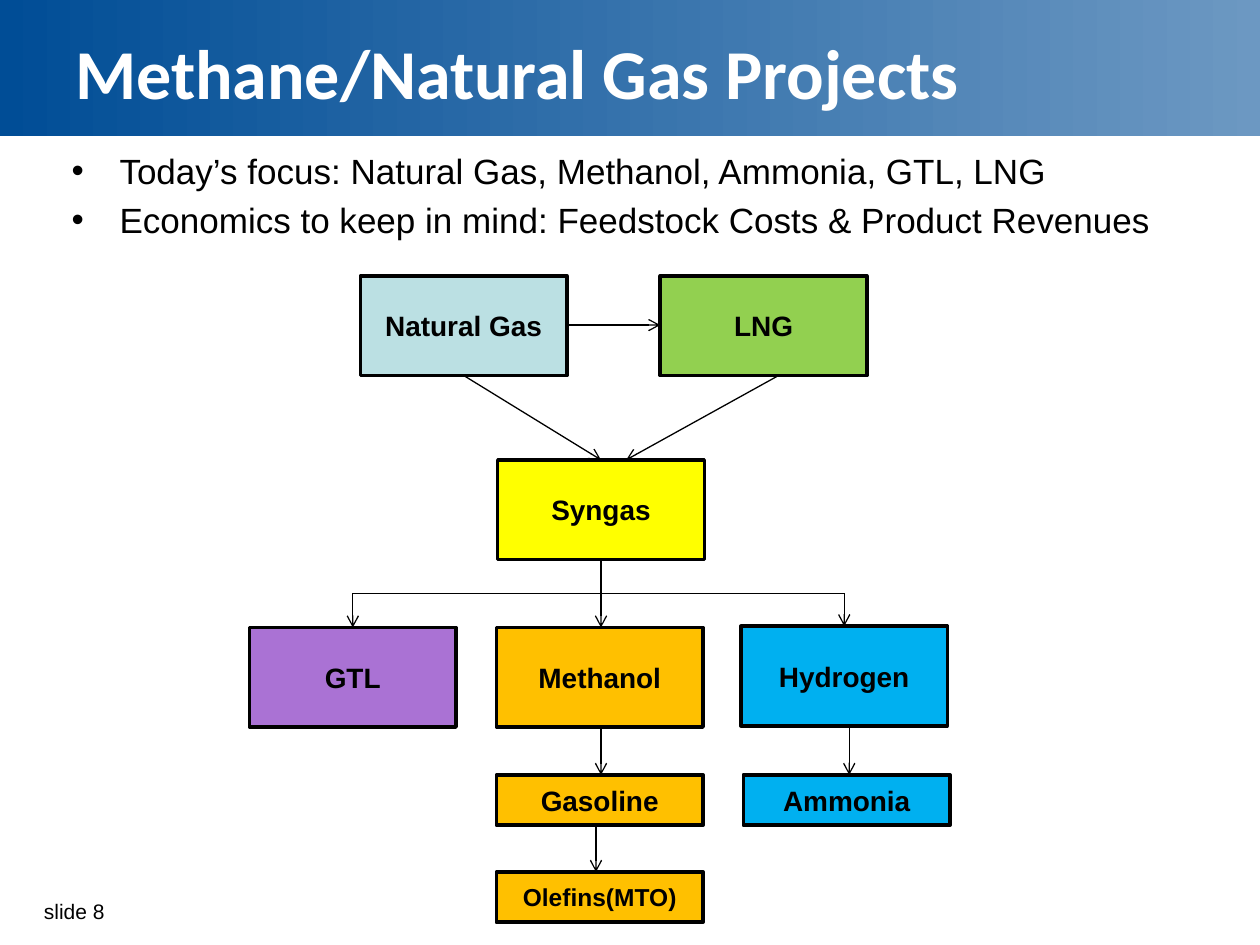
from dataclasses import dataclass
from typing import Any

from lxml.etree import SubElement
from pptx import Presentation
from pptx.dml.color import RGBColor
from pptx.enum.shapes import MSO_CONNECTOR, MSO_SHAPE
from pptx.enum.text import MSO_ANCHOR, PP_ALIGN
from pptx.oxml.ns import qn
from pptx.util import Inches, Pt

COLORS = {
    "black": "000000", "white": "FFFFFF",
    "banner_start": "004D96", "banner_end": "6C98C2",
    "pale_blue": "BBE0E3", "green": "92D050", "yellow": "FFFF00",
    "purple": "AA72D4", "orange": "FFC000", "blue": "00B0F0",
}
NODE_WIDTH, TALL, SHORT = 1.64, 0.79, 0.4


@dataclass(frozen=True)
class Node:
    label: str
    left: float
    top: float
    color: str
    height: float = TALL
    size: int = 16


@dataclass(frozen=True)
class Link:
    start: tuple[float, float]
    end: tuple[float, float]
    arrow: bool = True


NODES = [
    Node("Natural Gas", 2.86, 2.19, "pale_blue"),
    Node("LNG", 5.24, 2.19, "green"),
    Node("Syngas", 3.95, 3.65, "yellow"),
    Node("GTL", 1.98, 4.98, "purple"),
    Node("Methanol", 3.94, 4.98, "orange"),
    Node("Hydrogen", 5.88, 4.97, "blue"),
    Node("Gasoline", 3.94, 6.15, "orange", SHORT),
    Node("Olefins(MTO)", 3.94, 6.92, "orange", SHORT, 14),
    Node("Ammonia", 5.9, 6.15, "blue", SHORT),
]
LINKS = [
    Link((4.5, 2.58), (5.24, 2.58)),
    Link((6.18, 2.98), (4.97, 3.65)),
    Link((3.68, 2.98), (4.77, 3.65)),
    Link((4.77, 4.44), (4.77, 4.98)),
    Link((2.8, 4.71), (6.7, 4.71), arrow=False),
    Link((2.8, 4.71), (2.8, 4.98)),
    Link((6.7, 4.71), (6.7, 4.97)),
    Link((4.77, 5.78), (4.77, 6.15)),
    Link((4.73, 6.55), (4.73, 6.92)),
    Link((6.74, 5.78), (6.74, 6.15)),
]
BULLETS = [
    "Today’s focus: Natural Gas, Methanol, Ammonia, GTL, LNG",
    "Economics to keep in mind: Feedstock Costs & Product Revenues",
]


def rgb(name: str) -> RGBColor:
    return RGBColor.from_string(COLORS[name])


def style(para: Any, size: int, color: str = "black", bold: bool = False, font: str = "Arial") -> None:
    for span in para.runs:
        span.font.name = font
        span.font.size = Pt(size)
        span.font.bold = bold
        span.font.color.rgb = rgb(color)


def add_text(page: Any, left: float, top: float, width: float, height: float, text: str) -> Any:
    box = page.shapes.add_textbox(Inches(left), Inches(top), Inches(width), Inches(height))
    box.text_frame.word_wrap = True
    box.text_frame.text = text
    return box.text_frame


def add_banner(page: Any) -> None:
    banner = page.shapes.add_shape(MSO_SHAPE.RECTANGLE, 0, 0, Inches(10), Inches(1.08))
    banner.shadow.inherit = False
    banner.line.fill.background()
    banner.fill.gradient()
    banner.fill.gradient_angle = 0
    for stop, color in zip(banner.fill.gradient_stops, ("banner_start", "banner_end")):
        stop.color.rgb = rgb(color)


def add_bullets(page: Any) -> None:
    frame = add_text(page, 0.47, 1.14, 9.22, 0.67, "\n".join(BULLETS))
    for index, para in enumerate(frame.paragraphs):
        properties = para._p.get_or_add_pPr()
        properties.set("marL", str(Inches(0.38)))
        properties.set("indent", str(Inches(-0.38)))
        SubElement(properties, qn("a:buFont")).set("typeface", "Arial")
        SubElement(properties, qn("a:buChar")).set("char", "•")
        para.space_before = Pt(4 if index else 0)
        style(para, 20)


def add_node(page: Any, node: Node) -> None:
    box = page.shapes.add_shape(
        MSO_SHAPE.RECTANGLE, Inches(node.left), Inches(node.top), Inches(NODE_WIDTH), Inches(node.height)
    )
    box.shadow.inherit = False
    box.fill.solid()
    box.fill.fore_color.rgb = rgb(node.color)
    box.line.color.rgb = rgb("black")
    box.line.width = Pt(2)
    box.text_frame.text = node.label
    box.text_frame.vertical_anchor = MSO_ANCHOR.MIDDLE
    para = box.text_frame.paragraphs[0]
    para.alignment = PP_ALIGN.CENTER
    style(para, node.size, bold=True)


def add_link(page: Any, link: Link) -> None:
    points = [Inches(value) for value in (*link.start, *link.end)]
    connector = page.shapes.add_connector(MSO_CONNECTOR.STRAIGHT, *points)
    connector.line.color.rgb = rgb("black")
    connector.line.width = Pt(0.75)
    if link.arrow:
        SubElement(connector.line._get_or_add_ln(), qn("a:tailEnd")).set("type", "arrow")
    SubElement(connector._element.spPr, qn("a:effectLst"))


def main() -> None:
    """Build the gas projects flow slide."""
    deck = Presentation()
    deck.slide_width, deck.slide_height = Inches(10), Inches(7.5)
    page = deck.slides.add_slide(deck.slide_layouts[6])
    add_banner(page)
    style(add_text(page, 0.25, 7.08, 1.08, 0.3, "slide 8").paragraphs[0], 12)
    title = add_text(page, 0.5, 0.3, 9, 0.53, "Methane/Natural Gas Projects")
    title.vertical_anchor = MSO_ANCHOR.MIDDLE
    style(title.paragraphs[0], 40, "white", True, "Calibri")
    add_bullets(page)
    for node in NODES:
        add_node(page, node)
    for link in LINKS:
        add_link(page, link)
    deck.save("out.pptx")


if __name__ == "__main__":
    main()
